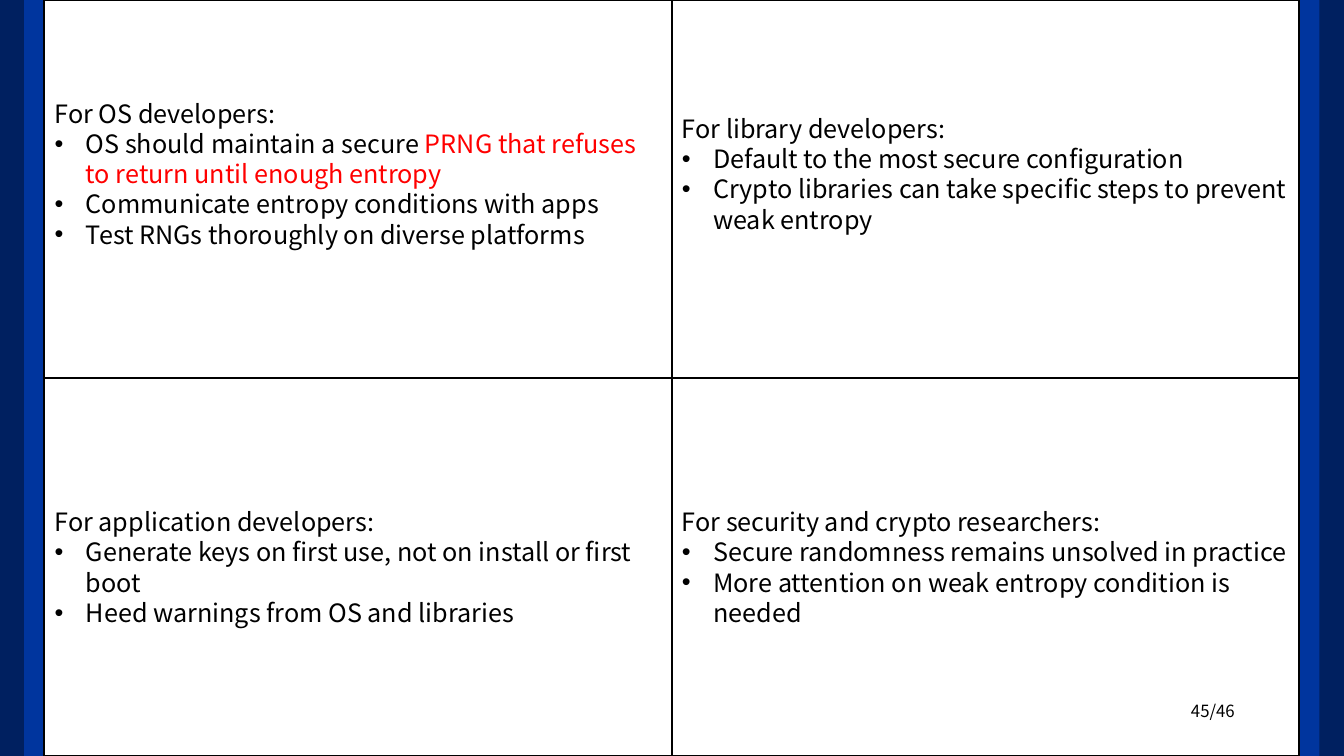
"""Build a slide of four recommendation panels between blue side bars."""

from dataclasses import dataclass

from lxml.etree import SubElement
from pptx import Presentation
from pptx.dml.color import RGBColor
from pptx.enum.shapes import MSO_SHAPE
from pptx.enum.text import MSO_ANCHOR, MSO_AUTO_SIZE, PP_ALIGN
from pptx.oxml.ns import qn
from pptx.shapes.placeholder import SlidePlaceholder
from pptx.slide import Slide
from pptx.text.text import _Paragraph as Paragraph
from pptx.util import Cm, Pt


@dataclass(frozen=True)
class Theme:
    font: str = "Noto Sans CJK KR"
    body_size: float = 18
    number_size: float = 12
    border_width: float = 1.5
    text: RGBColor = RGBColor(0, 0, 0)
    accent: RGBColor = RGBColor(0xFF, 0, 0)
    outer_bar: RGBColor = RGBColor(0x00, 0x20, 0x60)
    inner_bar: RGBColor = RGBColor(0x00, 0x35, 0x9E)


@dataclass(frozen=True)
class Bar:
    left: float
    width: float
    color: RGBColor


@dataclass(frozen=True)
class Phrase:
    text: str
    accented: bool = False


@dataclass(frozen=True)
class Panel:
    placeholder_index: int
    column: int
    row: int
    heading: str
    bullets: tuple[tuple[Phrase, ...], ...]
    bottom_margin: float = 0.13


THEME = Theme()
SLIDE_WIDTH, SLIDE_HEIGHT = 33.87, 19.05
PANEL_LEFT, PANEL_WIDTH, PANEL_HEIGHT = 1.12, 15.81, SLIDE_HEIGHT / 2
PANELS_RIGHT = PANEL_LEFT + 2 * PANEL_WIDTH
INNER_BAR_WIDTH = 0.51
RAISED_MARGIN = 0.9
BULLET_INDENT = 0.79
COMPARISON_LAYOUT = 4

BARS = (
    Bar(0, PANEL_LEFT, THEME.outer_bar),
    Bar(PANELS_RIGHT, SLIDE_WIDTH - PANELS_RIGHT, THEME.outer_bar),
    Bar(PANEL_LEFT - INNER_BAR_WIDTH, INNER_BAR_WIDTH, THEME.inner_bar),
    Bar(PANELS_RIGHT, INNER_BAR_WIDTH, THEME.inner_bar),
)

PANELS = (
    Panel(1, 0, 0, "For OS developers:", (
        (Phrase("OS should maintain a secure "),
         Phrase("PRNG that refuses to return until enough entropy", True)),
        (Phrase("Communicate entropy conditions with apps"),),
        (Phrase("Test RNGs thoroughly on diverse platforms"),),
    ), RAISED_MARGIN),
    Panel(2, 0, 1, "For application developers:", (
        (Phrase("Generate keys on first use, not on install or first boot"),),
        (Phrase("Heed warnings from OS and libraries"),),
    )),
    Panel(3, 1, 0, "For library developers:", (
        (Phrase("Default to the most secure configuration"),),
        (Phrase("Crypto libraries can take specific steps to prevent weak entropy"),),
    ), RAISED_MARGIN),
    Panel(4, 1, 1, "For security and crypto researchers:", (
        (Phrase("Secure randomness remains unsolved in practice"),),
        (Phrase("More attention on weak entropy condition is needed"),),
    )),
)


def add_bar(slide: Slide, bar: Bar) -> None:
    shape = slide.shapes.add_shape(
        MSO_SHAPE.RECTANGLE, Cm(bar.left), 0, Cm(bar.width), Cm(SLIDE_HEIGHT))
    shape.shadow.inherit = False
    shape.fill.solid()
    shape.fill.fore_color.rgb = bar.color
    shape.line.fill.background()


def add_run(paragraph: Paragraph, phrase: Phrase, size: float) -> None:
    run = paragraph.add_run()
    run.text = phrase.text
    run.font.name = THEME.font
    run.font.size = Pt(size)
    run.font.bold = False
    run.font.color.rgb = THEME.accent if phrase.accented else THEME.text


def format_paragraph(paragraph: Paragraph, bulleted: bool) -> None:
    paragraph.alignment = PP_ALIGN.LEFT
    paragraph.line_spacing = 1.0
    paragraph.space_before = paragraph.space_after = Pt(0)
    properties = paragraph._p.get_or_add_pPr()
    indent = Cm(BULLET_INDENT) if bulleted else 0
    properties.set("marL", str(indent))
    properties.set("indent", str(-indent))
    if bulleted:
        SubElement(properties, qn("a:buFont"), typeface="Arial")
        SubElement(properties, qn("a:buChar"), char="•")
    else:
        SubElement(properties, qn("a:buNone"))


def fill_panel(slide: Slide, placeholder: SlidePlaceholder, panel: Panel) -> None:
    placeholder.left = Cm(PANEL_LEFT + panel.column * PANEL_WIDTH)
    placeholder.top = Cm(panel.row * PANEL_HEIGHT)
    placeholder.width, placeholder.height = Cm(PANEL_WIDTH), Cm(PANEL_HEIGHT)
    placeholder.line.color.rgb = THEME.text
    placeholder.line.width = Pt(THEME.border_width)
    frame = placeholder.text_frame
    frame.word_wrap = True
    frame.auto_size = MSO_AUTO_SIZE.NONE
    frame.vertical_anchor = MSO_ANCHOR.MIDDLE
    frame.margin_bottom = Cm(panel.bottom_margin)
    heading = frame.paragraphs[0]
    format_paragraph(heading, bulleted=False)
    add_run(heading, Phrase(panel.heading), THEME.body_size)
    for phrases in panel.bullets:
        paragraph = frame.add_paragraph()
        format_paragraph(paragraph, bulleted=True)
        for phrase in phrases:
            add_run(paragraph, phrase, THEME.body_size)
    slide.shapes.element.append(placeholder.element)


def add_page_number(slide: Slide, text: str) -> None:
    box = slide.shapes.add_textbox(Cm(23.88), Cm(17.53), Cm(7.49), Cm(0.76))
    box.text_frame.word_wrap = True
    paragraph = box.text_frame.paragraphs[0]
    paragraph.alignment = PP_ALIGN.RIGHT
    add_run(paragraph, Phrase(text), THEME.number_size)


def main() -> None:
    presentation = Presentation()
    presentation.slide_width = Cm(SLIDE_WIDTH)
    presentation.slide_height = Cm(SLIDE_HEIGHT)
    slide = presentation.slides.add_slide(presentation.slide_layouts[COMPARISON_LAYOUT])
    title = slide.shapes.title.element
    title.getparent().remove(title)
    for bar in BARS:
        add_bar(slide, bar)
    add_page_number(slide, "45/46")
    placeholders = {item.placeholder_format.idx: item for item in slide.placeholders}
    for panel in PANELS:
        fill_panel(slide, placeholders[panel.placeholder_index], panel)
    presentation.save("out.pptx")


if __name__ == "__main__":
    main()
